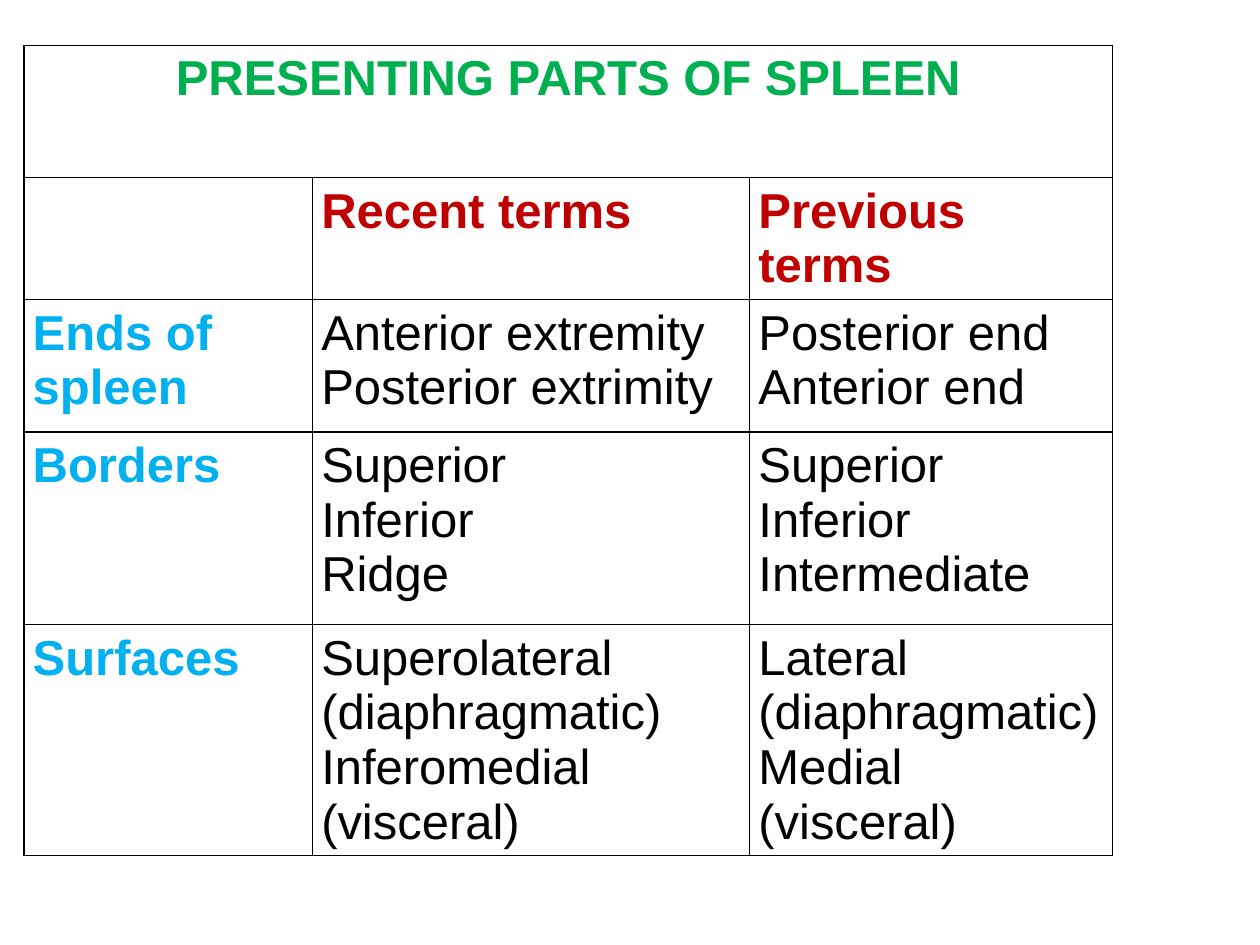
"""Build a slide with one table comparing recent and previous terms for the parts of the spleen."""
from dataclasses import dataclass

from lxml.etree import SubElement
from pptx import Presentation
from pptx.dml.color import RGBColor
from pptx.enum.text import PP_ALIGN as Align
from pptx.oxml.ns import qn
from pptx.util import Inches, Pt

GREEN, RED, BLUE, BLACK = "00B050", "C00000", "00B0F0", "000000"
COLUMN_WIDTHS = (2.29, 3.47, 2.88)
ROW_HEIGHTS = (1.05, 0.57, 1.05, 1.53, 1.72)
LEFT, TOP, WIDTH, HEIGHT = 0.19, 0.36, 8.65, 6.63


@dataclass(frozen=True)
class Entry:
    lines: tuple[str, ...] = ()
    color: str = BLACK
    bold: bool = False
    align: Align | None = None


def heading(text: str, color: str, align: Align | None = None) -> Entry:
    return Entry((text,), color, True, align)


def terms(*lines: str) -> Entry:
    return Entry(lines)


ROWS = (
    (heading("PRESENTING PARTS OF SPLEEN", GREEN, Align.CENTER), Entry(), Entry()),
    (Entry(), heading("Recent terms", RED), heading("Previous terms", RED)),
    (
        heading("Ends of spleen", BLUE),
        terms("Anterior extremity", "Posterior extrimity"),
        terms("Posterior end", "Anterior end"),
    ),
    (
        heading("Borders", BLUE),
        terms("Superior", "Inferior", "Ridge"),
        terms("Superior", "Inferior", "Intermediate"),
    ),
    (
        heading("Surfaces", BLUE),
        terms("Superolateral", "(diaphragmatic)", "Inferomedial (visceral)"),
        terms("Lateral", "(diaphragmatic)", "Medial (visceral)"),
    ),
)


def rgb(color: str) -> RGBColor:
    return RGBColor.from_string(color)


def draw_borders(cell, color: str = BLACK, points: float = 1) -> None:
    properties = cell._tc.get_or_add_tcPr()
    for side in ("a:lnL", "a:lnR", "a:lnT", "a:lnB"):
        line = SubElement(properties, qn(side), w=str(Pt(points)))
        fill = SubElement(line, qn("a:solidFill"))
        SubElement(fill, qn("a:srgbClr"), val=color)


def fill_cell(cell, entry: Entry) -> None:
    cell.margin_left = cell.margin_right = Inches(0.07)
    cell.margin_top = cell.margin_bottom = Inches(0.05)
    draw_borders(cell)
    cell.fill.background()
    frame = cell.text_frame
    for index, line in enumerate(entry.lines):
        para = frame.add_paragraph() if index else frame.paragraphs[0]
        para.alignment = entry.align
        span = para.add_run()
        span.text = line
        span.font.name = "Arial"
        span.font.size = Pt(28)
        span.font.bold = entry.bold
        span.font.color.rgb = rgb(entry.color)


def add_terms_table(page) -> None:
    box = page.shapes.add_table(
        len(ROWS), len(COLUMN_WIDTHS), *map(Inches, (LEFT, TOP, WIDTH, HEIGHT))
    )
    table = box.table
    table.first_row = table.horz_banding = False
    for column, width in zip(table.columns, COLUMN_WIDTHS):
        column.width = Inches(width)
    for row, height, entries in zip(table.rows, ROW_HEIGHTS, ROWS):
        row.height = Inches(height)
        for cell, entry in zip(row.cells, entries):
            fill_cell(cell, entry)
    table.cell(0, 0).merge(table.cell(0, len(COLUMN_WIDTHS) - 1))
    box.height = Inches(HEIGHT)


def main() -> None:
    deck = Presentation()
    deck.slide_width, deck.slide_height = Inches(10), Inches(7.5)
    page = deck.slides.add_slide(deck.slide_layouts[6])
    add_terms_table(page)
    deck.save("out.pptx")


if __name__ == "__main__":
    main()
